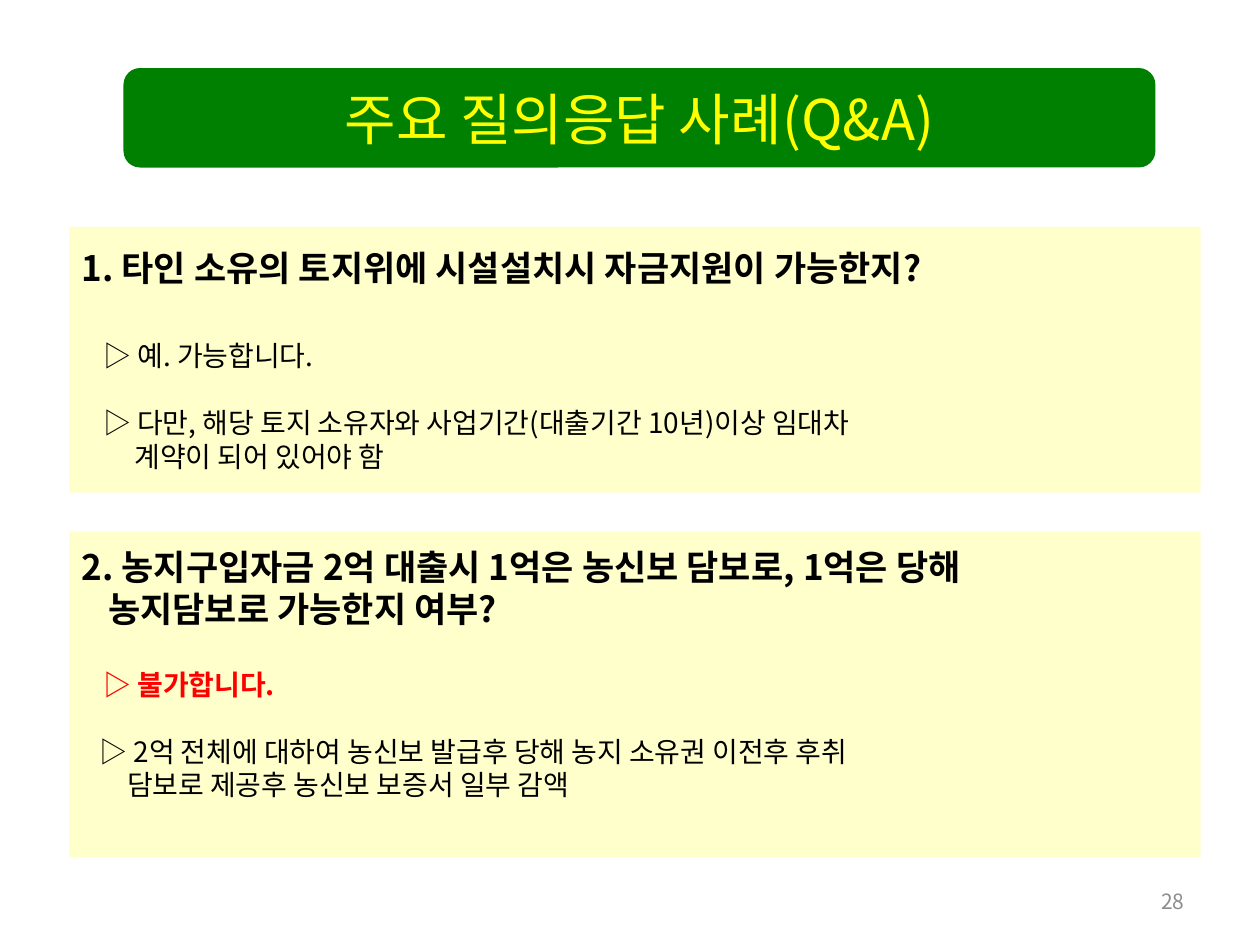
from dataclasses import dataclass
from lxml import etree
from pptx import Presentation
from pptx.dml.color import RGBColor
from pptx.enum.shapes import MSO_SHAPE as Shape
from pptx.enum.text import MSO_ANCHOR as Anchor, PP_ALIGN as Align
from pptx.oxml.ns import qn
from pptx.util import Inches, Pt


def color(hex_string):
    return RGBColor.from_string(hex_string)


@dataclass
class Line:
    text: str
    size: float = 16
    color: str = "000000"
    bold: bool = False
    before: float = 0
    indent: float = 0
    hang: float = 0
    align: Align = Align.LEFT


@dataclass
class SlideBuilder:
    presentation: object
    slide: object
    font: str = "Noto Sans CJK KR"
    line_height: float = 1.2

    def area(self, left, top, width, height):
        """Turn percentages of the slide's size into lengths."""
        slide_width = self.presentation.slide_width
        slide_height = self.presentation.slide_height
        return [int(share * full / 100) for share, full in
                zip((left, top, width, height), (slide_width, slide_height) * 2)]

    def fill_text(self, shape, lines):
        frame = shape.text_frame
        frame.word_wrap = True
        frame.vertical_anchor = Anchor.MIDDLE
        for index, line in enumerate(lines):
            paragraph = frame.add_paragraph() if index else frame.paragraphs[0]
            paragraph.text = line.text
            paragraph.alignment = line.align
            paragraph.line_spacing = Pt(line.size * self.line_height)
            paragraph.space_before = Pt(line.before)
            properties = paragraph._p.get_or_add_pPr()
            properties.set("marL", str(Inches(line.indent + line.hang)))
            properties.set("indent", str(Inches(-line.hang)))
            font = paragraph.font
            font.name, font.size, font.bold = self.font, Pt(line.size), line.bold
            font.color.rgb = color(line.color)
            for run in paragraph.runs:
                run.font.name = self.font
                east_asian = etree.SubElement(run.font._element, qn("a:ea"))
                east_asian.set("typeface", self.font)

    def panel(self, kind, area, fill, lines, bottom_inset=0.05):
        shape = self.slide.shapes.add_shape(kind, *self.area(*area))
        shape.shadow.inherit = False
        shape.fill.solid()
        shape.fill.fore_color.rgb = color(fill)
        shape.line.fill.background()
        shape.text_frame.margin_bottom = Inches(bottom_inset)
        self.fill_text(shape, lines)

    def label(self, area, line):
        self.fill_text(self.slide.shapes.add_textbox(*self.area(*area)), [line])


def main():
    presentation = Presentation()
    presentation.slide_width, presentation.slide_height = Inches(10), Inches(7.5)
    slide = presentation.slides.add_slide(presentation.slide_layouts[6])
    builder = SlideBuilder(presentation, slide)

    builder.panel(Shape.ROUNDED_RECTANGLE, (9.8, 7.2, 81.9, 10.53), "008000",
                  [Line("주요 질의응답 사례(Q&A)", 32, "FFFF00", align=Align.CENTER)])

    panel_left, panel_width, panel_fill = 5.5, 89.8, "FFFFCC"
    builder.panel(Shape.RECTANGLE, (panel_left, 24, panel_width, 28.13), panel_fill, [
        Line("1. 타인 소유의 토지위에 시설설치시 자금지원이 가능한지?", 20, bold=True),
        Line("▷ 예. 가능합니다.", before=28.8, indent=0.17),
        Line("▷ 다만, 해당 토지 소유자와 사업기간(대출기간 10년)이상 임대차\v계약이 되어 있어야 함",
             before=19.2, indent=0.17, hang=0.25),
    ])
    builder.panel(Shape.RECTANGLE, (panel_left, 56.27, panel_width, 34.4), panel_fill, [
        Line("2. 농지구입자금 2억 대출시 1억은 농신보 담보로, 1억은 당해\v농지담보로 가능한지 여부?",
             20, bold=True, hang=0.21),
        Line("▷ 불가합니다.", color="FF0000", bold=True, before=21.6, indent=0.17),
        Line("▷ 2억 전체에 대하여 농신보 발급후 당해 농지 소유권 이전후 후취\v담보로 제공후 농신보 보증서 일부 감액",
             before=19.2, indent=0.14, hang=0.22),
    ], bottom_inset=0.38)

    builder.label((71.7, 92.67, 23.3, 5.33),
                  Line("28", 12, "8C8C8C", align=Align.RIGHT))
    presentation.save("out.pptx")


if __name__ == "__main__":
    main()
